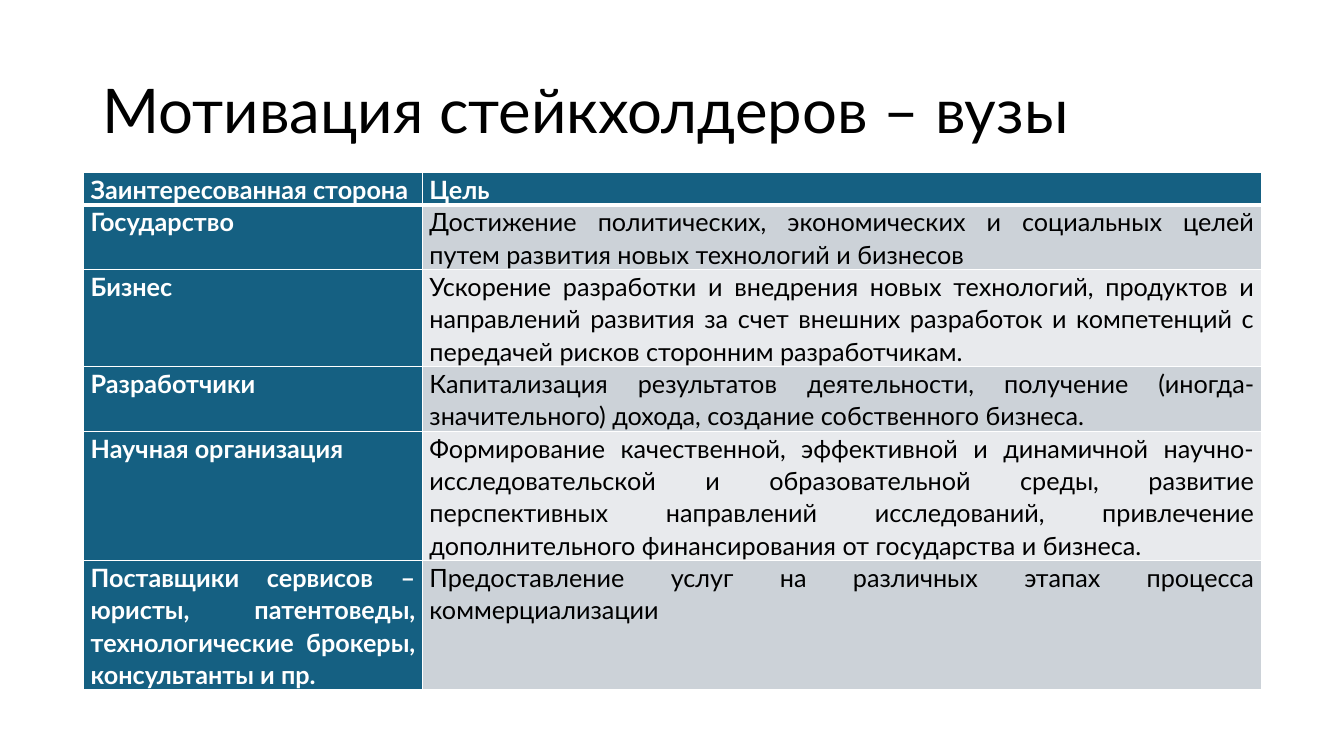
import pptx
import pptx.dml.color
import pptx.enum.text
import pptx.oxml
import pptx.oxml.ns
import pptx.util
from pptx.util import Inches

WHITE, BLACK, TEAL = "FFFFFF", "000000", "156082"
BANDS = ("CCD2D8", "E8EAED")
LINE_HEIGHT = 0.32
COLUMN_WIDTHS = (3.36, 8.32)

# Stakeholder, goal, number of text lines in the row
STAKEHOLDERS = [
    ("Заинтересованная сторона", "Цель", 1),
    ("Государство",
     "Достижение политических, экономических и социальных целей путем развития "
     "новых технологий и бизнесов", 2),
    ("Бизнес",
     "Ускорение разработки и внедрения новых технологий, продуктов и направлений "
     "развития за счет внешних разработок и компетенций с передачей рисков "
     "сторонним разработчикам.", 3),
    ("Разработчики",
     "Капитализация результатов деятельности, получение (иногда-значительного) "
     "дохода, создание собственного бизнеса.", 2),
    ("Научная организация",
     "Формирование качественной, эффективной и динамичной "
     "научно-исследовательской и образовательной среды, развитие перспективных "
     "направлений исследований, привлечение дополнительного финансирования от "
     "государства и бизнеса.", 4),
    ("Поставщики сервисов – юристы, патентоведы, технологические брокеры, "
     "консультанты и пр.",
     "Предоставление услуг на различных этапах процесса коммерциализации", 4),
]


def color(value):
    return pptx.dml.color.RGBColor.from_string(value)


class Page:
    """Holds the style and the current slide."""

    font_name = "Lato"

    def __init__(self, deck):
        self.slide = deck.slides.add_slide(deck.slide_layouts[6])

    def format_text(self, frame, size, ink, bold=False, spacing=1.0):
        for para in frame.paragraphs:
            para.line_spacing = spacing
            for span in para.runs:
                span.font.name = self.font_name
                span.font.size = pptx.util.Pt(size)
                span.font.bold = bold
                span.font.color.rgb = color(ink)

    def title(self, text, left, top, width, height):
        box = self.slide.shapes.add_textbox(
            Inches(left), Inches(top), Inches(width), Inches(height))
        frame = box.text_frame
        frame.word_wrap = True
        frame.vertical_anchor = pptx.enum.text.MSO_ANCHOR.MIDDLE
        frame.text = text
        self.format_text(frame, 44, BLACK, spacing=0.9)

    def borders(self, cell, top, bottom):
        properties = cell._tc.get_or_add_tcPr()
        widths = {"lnL": 1, "lnR": 1, "lnT": top, "lnB": bottom}
        for index, (side, width) in enumerate(widths.items()):
            properties.insert(index, pptx.oxml.parse_xml(
                f'<a:{side} {pptx.oxml.ns.nsdecls("a")} w="{pptx.util.Pt(width)}">'
                f'<a:solidFill><a:srgbClr val="{WHITE}"/></a:solidFill></a:{side}>'))

    def cell(self, cell, text, fill, ink, bold):
        cell.fill.solid()
        cell.fill.fore_color.rgb = color(fill)
        cell.margin_left = cell.margin_right = Inches(0.07)
        cell.margin_top = cell.margin_bottom = 0
        cell.text_frame.text = text
        para = cell.text_frame.paragraphs[0]
        para.alignment = pptx.enum.text.PP_ALIGN.JUSTIFY
        para.space_after = pptx.util.Pt(8)
        self.format_text(cell.text_frame, 18, ink, bold, 1.07)

    def table(self, rows, left, top):
        height = LINE_HEIGHT * sum(lines for *_, lines in rows)
        table = self.slide.shapes.add_table(
            len(rows), len(COLUMN_WIDTHS), Inches(left), Inches(top),
            Inches(sum(COLUMN_WIDTHS)), Inches(height)).table
        for column, width in zip(table.columns, COLUMN_WIDTHS):
            column.width = Inches(width)
        for row, (*texts, lines) in enumerate(rows):
            table.rows[row].height = Inches(LINE_HEIGHT * lines)
            for column, text in enumerate(texts):
                cell = table.cell(row, column)
                heading = row == 0 or column == 0
                fill = TEAL if heading else BANDS[(row - 1) % 2]
                self.cell(cell, text, fill, WHITE if heading else BLACK, heading)
                # Thick rule between the header and the first row
                self.borders(cell, 3 if row == 1 else 1, 3 if row == 0 else 1)


def main():
    deck = pptx.Presentation()
    deck.slide_width, deck.slide_height = Inches(13.33), Inches(7.5)
    page = Page(deck)

    # Heading
    page.title("Мотивация стейкхолдеров – вузы", 0.92, 0.4, 11.5, 1.45)

    # Stakeholders and their goals
    page.table(STAKEHOLDERS, 0.83, 1.71)

    deck.save("out.pptx")


if __name__ == "__main__":
    main()
